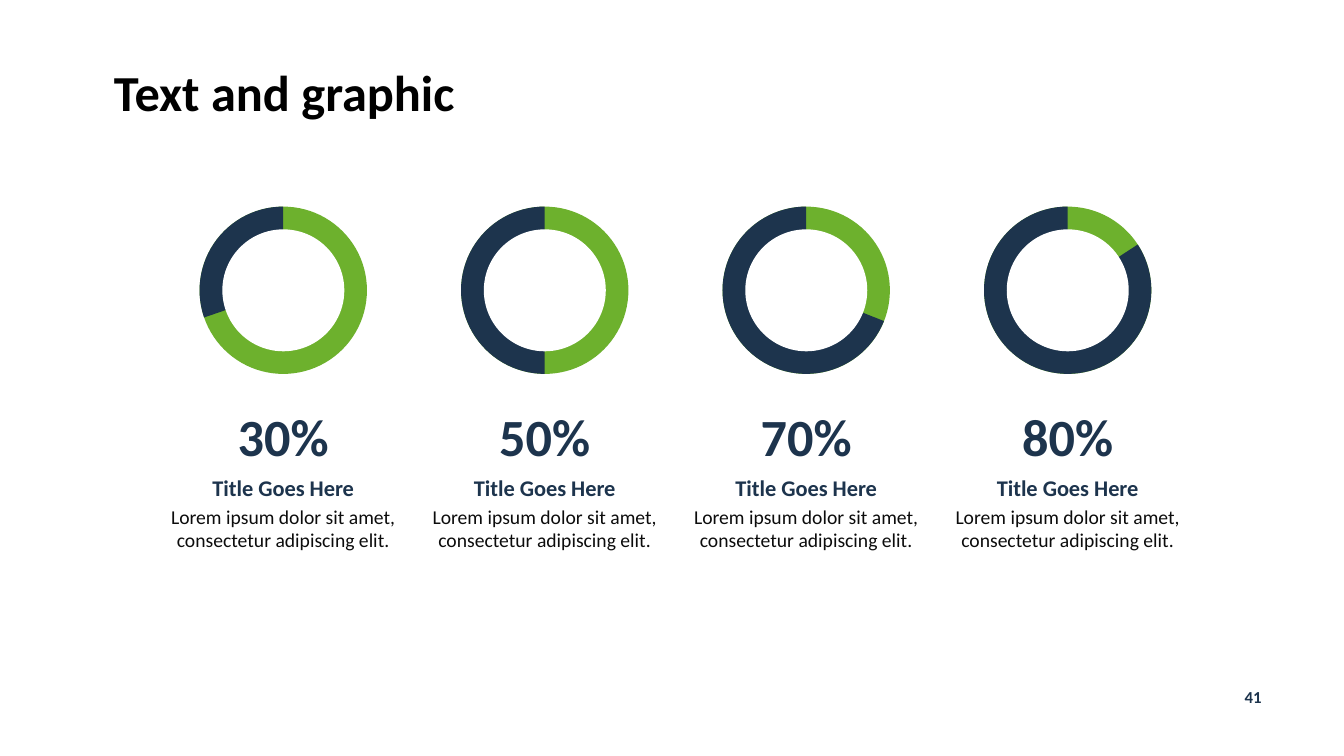
from dataclasses import dataclass

from pptx import Presentation
from pptx.dml.color import RGBColor
from pptx.enum.shapes import MSO_SHAPE
from pptx.enum.text import MSO_ANCHOR, MSO_AUTO_SIZE, PP_ALIGN
from pptx.shapes.autoshape import Shape
from pptx.slide import Slide
from pptx.text.text import TextFrame
from pptx.util import Inches, Pt

OVAL = MSO_SHAPE.OVAL
PIE = MSO_SHAPE.PIE
MIDDLE = MSO_ANCHOR.MIDDLE
TOP = MSO_ANCHOR.TOP
FIXED = MSO_AUTO_SIZE.NONE
LEFT = PP_ALIGN.LEFT
CENTER = PP_ALIGN.CENTER

NAVY = "1D344D"
GREEN = "6DB12D"
WHITE = "FFFFFF"
BLACK = "000000"
INK = "0C0C0C"
FONT = "Calibri"

RING = 1.66
HOLE = 1.21
RING_TOP = 2.05
FIRST = 2.81
PITCH = (9.76 - 1.98) / 3
HEADING = "Title Goes Here"
BODY = "Lorem ipsum dolor sit amet, consectetur adipiscing elit."


@dataclass
class Style:
    size: float
    color: str
    bold: bool = True
    align: PP_ALIGN = CENTER
    before: float = 0
    line: float = 1.0


@dataclass
class Gauge:
    label: str
    start: float


HEAD = Style(36, BLACK, align=LEFT, line=0.9)
VALUE = Style(37.3, NAVY)
NAME = Style(16, NAVY)
NOTE = Style(14, INK, bold=False, before=2.7)
NUMBER = Style(12, NAVY)

GAUGES = [
    Gauge("30%", 161),
    Gauge("50%", 90.04),
    Gauge("70%", 21.62),
    Gauge("80%", 326.87),
]


def paint(value: str) -> RGBColor:
    return RGBColor.from_string(value)


def write(frame: TextFrame, lines: list[tuple[str, Style]],
          pad: tuple[float, float], anchor: MSO_ANCHOR = TOP) -> None:
    frame.word_wrap = True
    frame.auto_size = FIXED
    frame.vertical_anchor = anchor
    frame.margin_left = frame.margin_right = Inches(pad[0])
    frame.margin_top = frame.margin_bottom = Inches(pad[1])
    frame.text = "\n".join(text for text, _ in lines)
    for para, (_, style) in zip(frame.paragraphs, lines):
        para.alignment = style.align
        para.space_before = Pt(style.before)
        para.line_spacing = style.line
        for run in para.runs:
            run.font.name = FONT
            run.font.size = Pt(style.size)
            run.font.bold = style.bold
            run.font.color.rgb = paint(style.color)


def add_text(slide: Slide, mid: float, top: float, width: float, height: float,
             lines: list[tuple[str, Style]], pad: tuple[float, float]) -> None:
    box = slide.shapes.add_textbox(
        Inches(mid - width / 2), Inches(top), Inches(width), Inches(height))
    write(box.text_frame, lines, pad)


def add_disc(slide: Slide, kind: MSO_SHAPE, mid: float, size: float,
             color: str) -> Shape:
    top = RING_TOP + (RING - size) / 2
    disc = slide.shapes.add_shape(
        kind, Inches(mid - size / 2), Inches(top), Inches(size), Inches(size))
    disc.shadow.inherit = False
    disc.fill.solid()
    disc.fill.fore_color.rgb = paint(color)
    disc.line.fill.background()
    return disc


def add_gauge(slide: Slide, gauge: Gauge, mid: float) -> None:
    add_disc(slide, OVAL, mid, RING, GREEN)
    slice_ = add_disc(slide, PIE, mid, RING, NAVY)
    slice_.adjustments[0] = gauge.start * 0.6
    slice_.adjustments[1] = 270 * 0.6
    add_disc(slide, OVAL, mid, HOLE, WHITE)
    add_text(slide, mid, 3.94, RING, 0.76, [(gauge.label, VALUE)], (0.13, 0.07))
    add_text(slide, mid, 4.7, 2.3, 0.78, [(HEADING, NAME), (BODY, NOTE)], (0, 0))


def main() -> None:
    deck = Presentation()
    deck.slide_width = Inches(13.33)
    deck.slide_height = Inches(7.5)
    slide = deck.slides.add_slide(deck.slide_layouts.get_by_name("Title Only"))

    title = slide.shapes.title
    title.left, title.top = Inches(1.03), Inches(0.62)
    title.width, title.height = Inches(7.91), Inches(0.65)
    write(title.text_frame, [("Text and graphic", HEAD)], (0.1, 0.05), MIDDLE)

    for index, gauge in enumerate(GAUGES):
        add_gauge(slide, gauge, FIRST + index * PITCH)

    add_text(slide, 12.43, 6.76, 1, 0.3, [("41", NUMBER)], (0.1, 0.05))
    deck.save("out.pptx")


if __name__ == "__main__":
    main()
